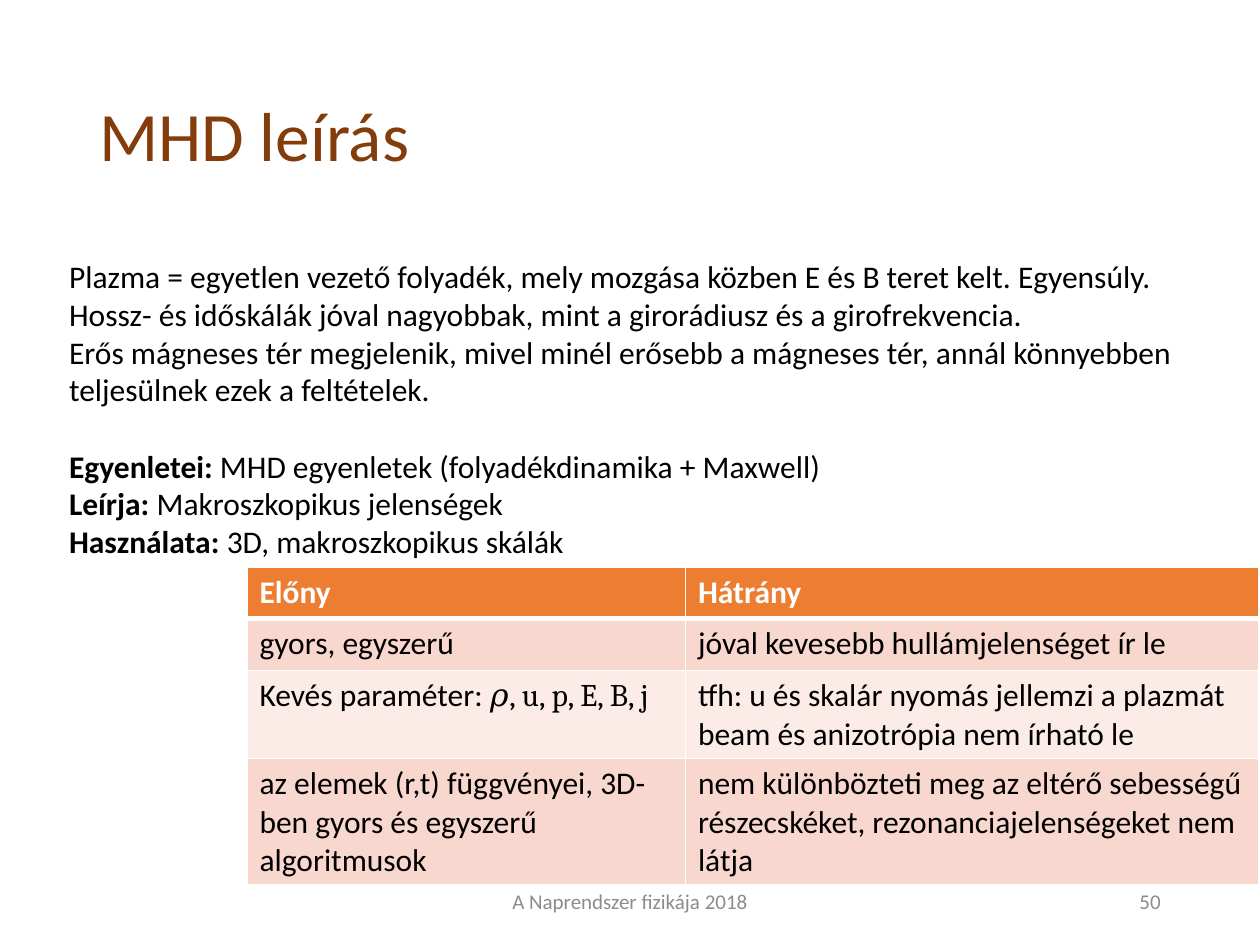
from dataclasses import dataclass

from lxml.etree import SubElement
from pptx import Presentation
from pptx.dml.color import RGBColor
from pptx.enum.text import MSO_ANCHOR as Anchor, PP_ALIGN as Align
from pptx.oxml.ns import qn
from pptx.util import Inches, Pt

INK, WHITE, GREY, BROWN = "000000", "FFFFFF", "8C8C8C", "843C0B"
HEADER_FILL, BAND_FILLS = "ED7D31", ("F8D7CE", "FCECE8")


@dataclass(frozen=True)
class Run:
    text: str
    bold: bool = False
    font: str = "Calibri"


@dataclass(frozen=True)
class Para:
    runs: tuple[Run, ...]
    space_before: float = 0


@dataclass(frozen=True)
class Block:
    left: float
    top: float
    width: float
    height: float
    paras: tuple[Para, ...]
    size: float = 18
    color: str = INK
    align: Align = Align.LEFT
    anchor: Anchor = Anchor.TOP


def rgb(color: str) -> RGBColor:
    return RGBColor.from_string(color)


def plain(text: str) -> Para:
    return Para((Run(text),))


def labelled(label: str, text: str, space_before: float = 0) -> Para:
    return Para((Run(label, bold=True), Run(text)), space_before)


def write(frame, paras: tuple[Para, ...], size: float, color: str, align: Align) -> None:
    for index, para in enumerate(paras):
        line = frame.paragraphs[0] if index == 0 else frame.add_paragraph()
        line.alignment = align
        if para.space_before:
            line.space_before = Pt(para.space_before)
        for part in para.runs:
            run = line.add_run()
            run.text = part.text
            run.font.name = part.font
            run.font.size = Pt(size)
            run.font.bold = part.bold
            run.font.color.rgb = rgb(color)


def draw_block(slide, block: Block) -> None:
    frame = slide.shapes.add_textbox(
        Inches(block.left), Inches(block.top), Inches(block.width), Inches(block.height)
    ).text_frame
    frame.word_wrap = True
    frame.vertical_anchor = block.anchor
    write(frame, block.paras, block.size, block.color, block.align)


def draw_borders(cell, top: float, bottom: float) -> None:
    properties = cell._tc.get_or_add_tcPr()
    for side, width in (("L", 1), ("R", 1), ("T", top), ("B", bottom)):
        line = SubElement(properties, qn(f"a:ln{side}"), w=str(Pt(width)))
        SubElement(SubElement(line, qn("a:solidFill")), qn("a:srgbClr"), val=WHITE)


def draw_table(slide, left: float, top: float, widths, heights, rows) -> None:
    table = slide.shapes.add_table(
        len(rows), len(widths), Inches(left), Inches(top),
        Inches(sum(widths)), Inches(sum(heights))
    ).table
    for column, width in zip(table.columns, widths):
        column.width = Inches(width)
    for index, (row, height) in enumerate(zip(rows, heights)):
        table.rows[index].height = Inches(height)
        header = index == 0
        for cell, paras in zip(table.rows[index].cells, row):
            draw_borders(cell, 3 if index == 1 else 1, 3 if header else 1)
            cell.fill.solid()
            cell.fill.fore_color.rgb = rgb(HEADER_FILL if header else BAND_FILLS[(index - 1) % 2])
            write(cell.text_frame, paras, 18, WHITE if header else INK, Align.LEFT)


BLOCKS = (
    Block(0.69, 0.68, 8.62, 0.98, (plain("MHD leírás"),), 39.6, BROWN),
    Block(3.31, 6.95, 3.38, 0.4, (plain("A Naprendszer fizikája 2018"),),
          12, GREY, Align.CENTER, Anchor.MIDDLE),
    Block(7.06, 6.95, 2.25, 0.4, (plain("50"),), 12, GREY, Align.RIGHT, Anchor.MIDDLE),
    Block(0.45, 1.99, 9.15, 2.83, (
        plain("Plazma = egyetlen vezető folyadék, mely mozgása közben E és B teret kelt. Egyensúly."),
        plain("Hossz- és időskálák jóval nagyobbak, mint a girorádiusz és a girofrekvencia."),
        plain("Erős mágneses tér megjelenik, mivel minél erősebb a mágneses tér, "
              "annál könnyebben teljesülnek ezek a feltételek."),
        labelled("Egyenletei:", " MHD egyenletek (folyadékdinamika + Maxwell)", 22),
        labelled("Leírja:", " Makroszkopikus jelenségek"),
        labelled("Használata: ", "3D, makroszkopikus skálák"),
    )),
)

PROS_AND_CONS = (
    ((Para((Run("Előny", bold=True),)),), (Para((Run("Hátrány", bold=True),)),)),
    ((plain("gyors, egyszerű"),), (plain("jóval kevesebb hullámjelenséget ír le"),)),
    ((Para((Run("Kevés paraméter: "), Run("𝜌, u, p, E, B, j", font="Cambria"))),),
     (plain("tfh: u és skalár nyomás jellemzi a plazmát"),
      plain("beam és anizotrópia nem írható le"))),
    ((plain("az elemek (r,t) függvényei, 3D-ben gyors és egyszerű algoritmusok"),),
     (plain("nem különbözteti meg az eltérő sebességű részecskéket, "
            "rezonanciajelenségeket nem látja"),)),
)


def main() -> None:
    deck = Presentation()
    deck.slide_width, deck.slide_height = Inches(10), Inches(7.5)
    slide = deck.slides.add_slide(deck.slide_layouts[6])
    for block in BLOCKS:
        draw_block(slide, block)
    draw_table(slide, 1.96, 4.5, (3.48, 4.55), (0.41, 0.41, 0.7, 0.99), PROS_AND_CONS)
    deck.save("out.pptx")


if __name__ == "__main__":
    main()
